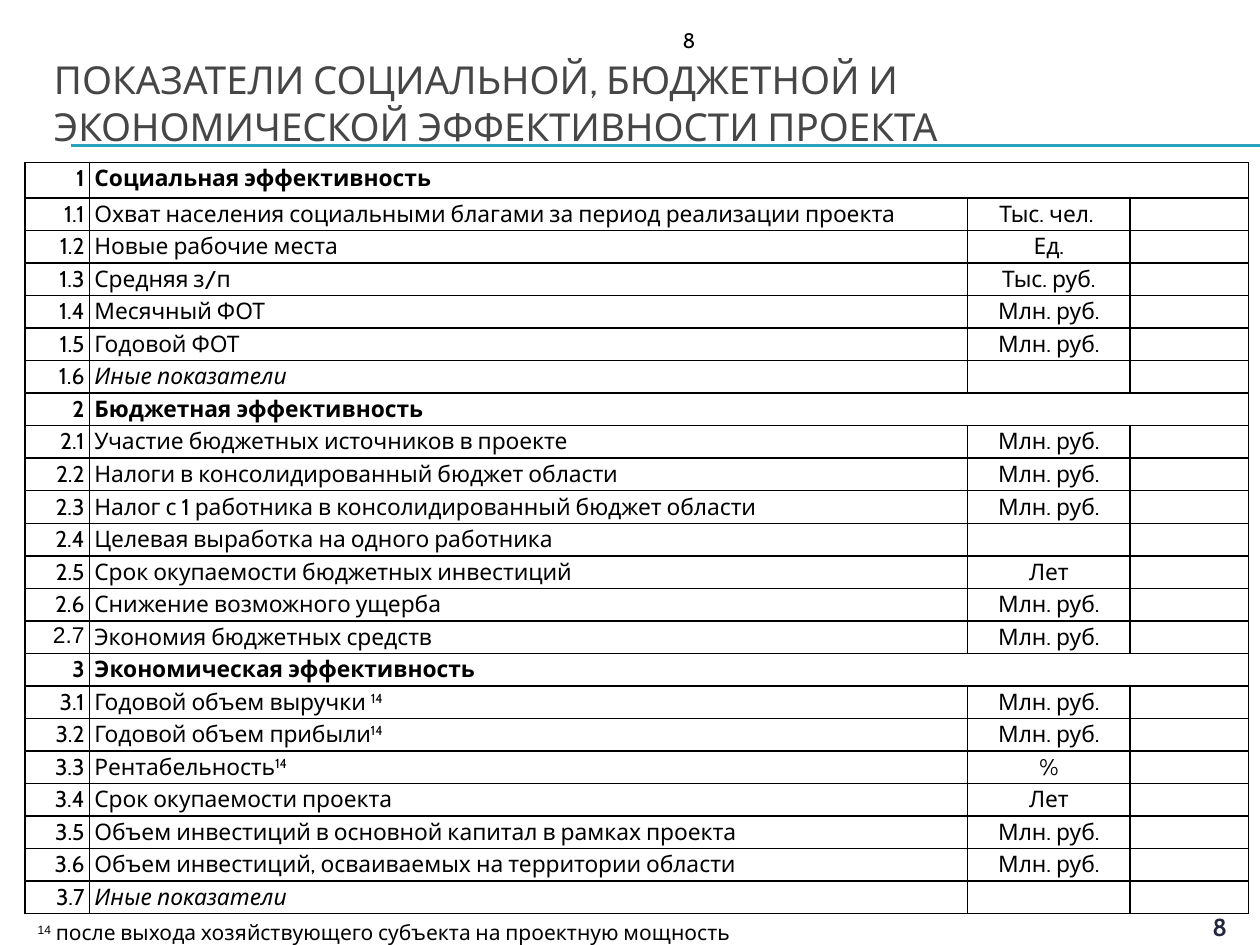
from typing import NamedTuple

from lxml import etree
from pptx import Presentation
from pptx.dml.color import RGBColor
from pptx.enum import shapes, text
from pptx.oxml import ns
from pptx.util import Inches, Pt

BLACK = RGBColor(0x00, 0x00, 0x00)
TITLE_GREY = RGBColor(0x46, 0x46, 0x46)
NAVY = RGBColor(0x23, 0x26, 0x3C)
TEAL = RGBColor(0x2D, 0xA2, 0xBF)
FONT = "Cabin"
LEFT, CENTER, RIGHT = text.PP_ALIGN.LEFT, text.PP_ALIGN.CENTER, text.PP_ALIGN.RIGHT
MLN = "Млн. руб."
NOTE = "14"


class Style(NamedTuple):
    size: float = 13
    color: RGBColor = BLACK
    bold: bool = False
    italic: bool = False
    font: str = FONT


class Indicator(NamedTuple):
    name: str
    unit: str = ""
    note: str = ""
    italic: bool = False
    number_font: str = FONT


class Section(NamedTuple):
    name: str
    indicators: list[Indicator]


class Label(NamedTuple):
    content: str
    box: tuple[float, float, float, float]
    style: Style
    align: text.PP_ALIGN = LEFT
    wrap: bool = True
    anchor: text.MSO_ANCHOR = text.MSO_ANCHOR.TOP
    bottom: float = 0.05
    note: str = ""


SECTIONS = [
    Section("Социальная эффективность", [
        Indicator("Охват населения социальными благами за период реализации проекта", "Тыс. чел. "),
        Indicator("Новые рабочие места", "Ед."),
        Indicator("Средняя з/п", "Тыс. руб."),
        Indicator("Месячный ФОТ", MLN),
        Indicator("Годовой ФОТ", MLN),
        Indicator("Иные показатели", italic=True),
    ]),
    Section("Бюджетная эффективность", [
        Indicator("Участие бюджетных источников в проекте", MLN),
        Indicator("Налоги в консолидированный бюджет области", MLN),
        Indicator("Налог с 1 работника в консолидированный бюджет области", MLN),
        Indicator("Целевая выработка на одного работника"),
        Indicator("Срок окупаемости бюджетных инвестиций", "Лет"),
        Indicator("Снижение возможного ущерба", MLN),
        Indicator("Экономия бюджетных средств", MLN, number_font="Arial"),
    ]),
    Section("Экономическая эффективность", [
        Indicator("Годовой объем выручки ", MLN, NOTE),
        Indicator("Годовой объем прибыли", MLN, NOTE),
        Indicator("Рентабельность", "%", NOTE),
        Indicator("Срок окупаемости проекта", "Лет"),
        Indicator("Объем инвестиций в основной капитал в рамках проекта", MLN),
        Indicator("Объем инвестиций, осваиваемых на территории области", MLN),
        Indicator("Иные показатели", italic=True),
    ]),
]

LABELS = [
    Label("ПОКАЗАТЕЛИ СОЦИАЛЬНОЙ, БЮДЖЕТНОЙ И ЭКОНОМИЧЕСКОЙ ЭФФЕКТИВНОСТИ ПРОЕКТА",
          (0.33, 0.53, 9.5, 0.92), Style(22, TITLE_GREY),
          anchor=text.MSO_ANCHOR.MIDDLE, bottom=0.4),
    Label(" после выхода хозяйствующего субъекта на проектную мощность",
          (0.2, 7.25, 6.69, 0.3), Style(12), note=NOTE),
    Label("8", (5.32, 0.17, 0.3, 0.3), Style(12), wrap=False),
    Label("8", (9.49, 7.19, 0.38, 0.31), Style(14, NAVY, bold=True), CENTER),
]

COLUMNS = [0.51, 6.97, 1.29, 0.94]
TABLE_TOP, TABLE_HEIGHT, FIRST_ROW = 1.29, 5.91, 0.28


def add_run(p, content: str, style: Style, raised: bool = False) -> None:
    r = p.add_run()
    r.text = content
    r.font.size = Pt(style.size)
    r.font.name = style.font
    r.font.bold = style.bold
    r.font.italic = style.italic
    r.font.color.rgb = style.color
    if raised:
        r.font._element.set("baseline", "30000")


def add_label(s, label: Label) -> None:
    sp = s.shapes.add_textbox(*map(Inches, label.box))
    tf = sp.text_frame
    tf.word_wrap = label.wrap
    tf.vertical_anchor = label.anchor
    tf.margin_bottom = Inches(label.bottom)
    p = tf.paragraphs[0]
    p.alignment = label.align
    if label.note:
        add_run(p, label.note, label.style._replace(font="Arial"), raised=True)
    add_run(p, label.content, label.style)


def add_rule(s, y: float) -> None:
    line = s.shapes.add_connector(
        shapes.MSO_CONNECTOR.STRAIGHT, Inches(0.56), Inches(y), Inches(10), Inches(y))
    line.line.color.rgb = TEAL
    line.line.width = Pt(0.75)
    etree.SubElement(line._element.spPr, ns.qn("a:effectLst"))


def format_cell(cell) -> None:
    cell.margin_left = cell.margin_right = Inches(0.04)
    cell.margin_top = cell.margin_bottom = Inches(0.02)
    props = cell._tc.get_or_add_tcPr()
    for side in ("a:lnL", "a:lnR", "a:lnT", "a:lnB"):
        border = etree.SubElement(props, ns.qn(side), w=str(Pt(1)))
        fill = etree.SubElement(border, ns.qn("a:solidFill"))
        etree.SubElement(fill, ns.qn("a:srgbClr"), val=str(BLACK))
    cell.fill.background()
    end = etree.SubElement(cell.text_frame.paragraphs[0]._p, ns.qn("a:endParaRPr"))
    end.set("sz", "1300")
    etree.SubElement(end, ns.qn("a:latin"), typeface=FONT)


def write_cell(cell, content: str, style: Style, align: text.PP_ALIGN, note: str = "") -> None:
    p = cell.text_frame.paragraphs[0]
    p.alignment = align
    if content:
        add_run(p, content, style)
    if note:
        add_run(p, note, style, raised=True)


def add_indicator_table(s, sections: list[Section]) -> None:
    count = sum(1 + len(section.indicators) for section in sections)
    table = s.shapes.add_table(
        count, len(COLUMNS), Inches(0.2), Inches(TABLE_TOP),
        Inches(sum(COLUMNS)), Inches(TABLE_HEIGHT)).table
    table.first_row = table.horz_banding = False
    for column, width in zip(table.columns, COLUMNS):
        column.width = Inches(width)
    for i, row in enumerate(table.rows):
        row.height = Inches((TABLE_HEIGHT - FIRST_ROW) / (count - 1) if i else FIRST_ROW)
    for cell in table.iter_cells():
        format_cell(cell)

    row = 0
    heading = Style(bold=True)
    for number, section in enumerate(sections, 1):
        write_cell(table.cell(row, 0), str(number), heading, RIGHT)
        write_cell(table.cell(row, 1), section.name, heading, LEFT)
        table.cell(row, 1).merge(table.cell(row, 3))
        row += 1
        for index, item in enumerate(section.indicators, 1):
            write_cell(table.cell(row, 0), f"{number}.{index}", Style(font=item.number_font), RIGHT)
            write_cell(table.cell(row, 1), item.name, Style(italic=item.italic), LEFT, item.note)
            write_cell(table.cell(row, 2), item.unit, Style(), CENTER)
            row += 1


def main() -> None:
    prs = Presentation()
    prs.slide_width, prs.slide_height = Inches(10), Inches(7.5)
    s = prs.slides.add_slide(prs.slide_layouts[6])
    for y in (1.15, 1.16):
        add_rule(s, y)
    add_indicator_table(s, SECTIONS)
    for label in LABELS:
        add_label(s, label)
    prs.save("out.pptx")


if __name__ == "__main__":
    main()
